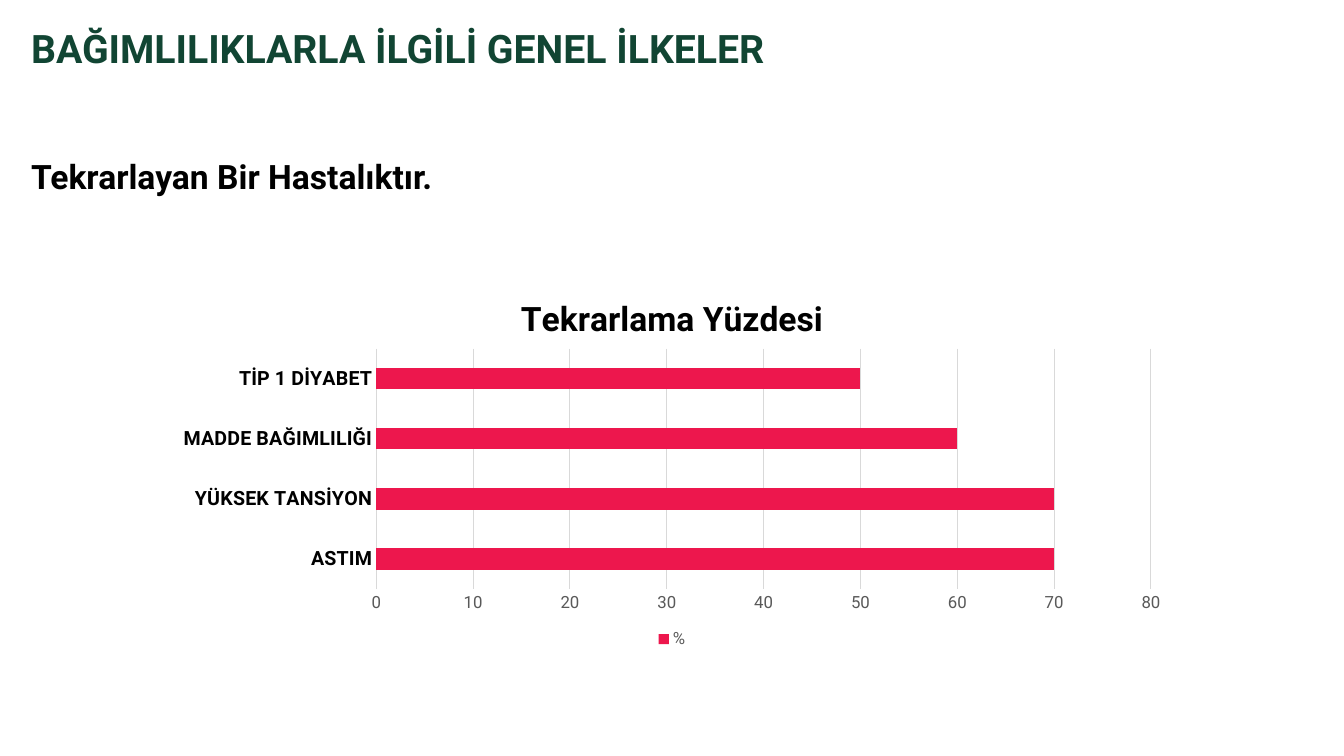
from lxml import etree
from pptx import Presentation
from pptx.chart.data import CategoryChartData
from pptx.dml.color import RGBColor
from pptx.enum.chart import XL_CHART_TYPE, XL_LEGEND_POSITION, XL_TICK_MARK
from pptx.oxml.ns import qn
from pptx.util import Inches, Pt

BAR = XL_CHART_TYPE.BAR_CLUSTERED
BOTTOM = XL_LEGEND_POSITION.BOTTOM
NO_TICK = XL_TICK_MARK.NONE

COLORS = {"green": "114533", "black": "000000", "gray": "595959",
          "grid": "D9D9D9", "bar": "ED174D"}
FONT = "Roboto"
# text, (left, top, width, height), size, color
HEADINGS = [
    ("BAĞIMLILIKLARLA İLGİLİ GENEL İLKELER", (0.21, 0.19, 10.58, 0.57), 28, "green"),
    ("Tekrarlayan Bir Hastalıktır.", (0.21, 1.5, 11.65, 0.5), 24, "black"),
]
CHART_TITLE = "Tekrarlama Yüzdesi"
CHART_AREA = (1.61, 2.75, 10.11, 3.73)
SERIES_NAME = "%"
RELAPSE_RATES = {"ASTIM": 70, "YÜKSEK TANSİYON": 70,
                 "MADDE BAĞIMLILIĞI": 60, "TİP 1 DİYABET": 50}
# Shares of the chart's size
PLOT_LAYOUT = {"layoutTarget": "inner", "xMode": "edge", "yMode": "edge",
               "x": 0.21, "y": 0.19, "w": 0.76, "h": 0.64}


def color(name):
    return RGBColor.from_string(COLORS[name])


def style(font, size, color_name, bold=False):
    font.name, font.size, font.bold = FONT, Pt(size), bold
    font.color.rgb = color(color_name)


def style_line(line):
    line.color.rgb = color("grid")
    line.width = Pt(0.75)


def add_heading(slide, text, area, size, color_name):
    box = slide.shapes.add_textbox(*map(Inches, area))
    box.text_frame.word_wrap = True
    para = box.text_frame.paragraphs[0]
    para.text = text
    style(para.font, size, color_name, bold=True)


def place_plot(chart):
    plot_area = chart.element.find(".//" + qn("c:plotArea"))
    for old_layout in plot_area.findall(qn("c:layout")):
        plot_area.remove(old_layout)
    layout = etree.Element(qn("c:layout"))
    manual = etree.SubElement(layout, qn("c:manualLayout"))
    for tag, value in PLOT_LAYOUT.items():
        etree.SubElement(manual, qn("c:" + tag)).set("val", str(value))
    plot_area.insert(0, layout)


def add_relapse_chart(slide):
    data = CategoryChartData()
    data.categories = list(RELAPSE_RATES)
    data.add_series(SERIES_NAME, list(RELAPSE_RATES.values()))
    chart = slide.shapes.add_chart(BAR, *map(Inches, CHART_AREA), data).chart
    style(chart.font, 10, "black")

    chart.has_title = True
    title = chart.chart_title.text_frame.paragraphs[0]
    title.text = CHART_TITLE
    style(title.font, 24, "black", bold=True)
    chart.chart_title.include_in_layout = False

    chart.has_legend = True
    chart.legend.position = BOTTOM
    chart.legend.include_in_layout = False
    style(chart.legend.font, 12, "gray")

    plot = chart.plots[0]
    plot.gap_width = 182
    plot.vary_by_categories = False
    fill = plot.series[0].format.fill
    fill.solid()
    fill.fore_color.rgb = color("bar")

    categories, values = chart.category_axis, chart.value_axis
    for axis in (categories, values):
        axis.major_tick_mark = axis.minor_tick_mark = NO_TICK
    style(categories.tick_labels.font, 14, "black", bold=True)
    style_line(categories.format.line)
    style(values.tick_labels.font, 12, "gray")
    values.minimum_scale, values.maximum_scale, values.major_unit = 0, 80, 10
    values.format.line.fill.background()
    values.has_major_gridlines = True
    style_line(values.major_gridlines.format.line)
    place_plot(chart)


def main():
    deck = Presentation()
    deck.slide_width, deck.slide_height = Inches(13.33), Inches(7.5)
    slide = deck.slides.add_slide(deck.slide_layouts[6])
    for heading in HEADINGS:
        add_heading(slide, *heading)
    add_relapse_chart(slide)
    deck.save("out.pptx")


if __name__ == "__main__":
    main()
